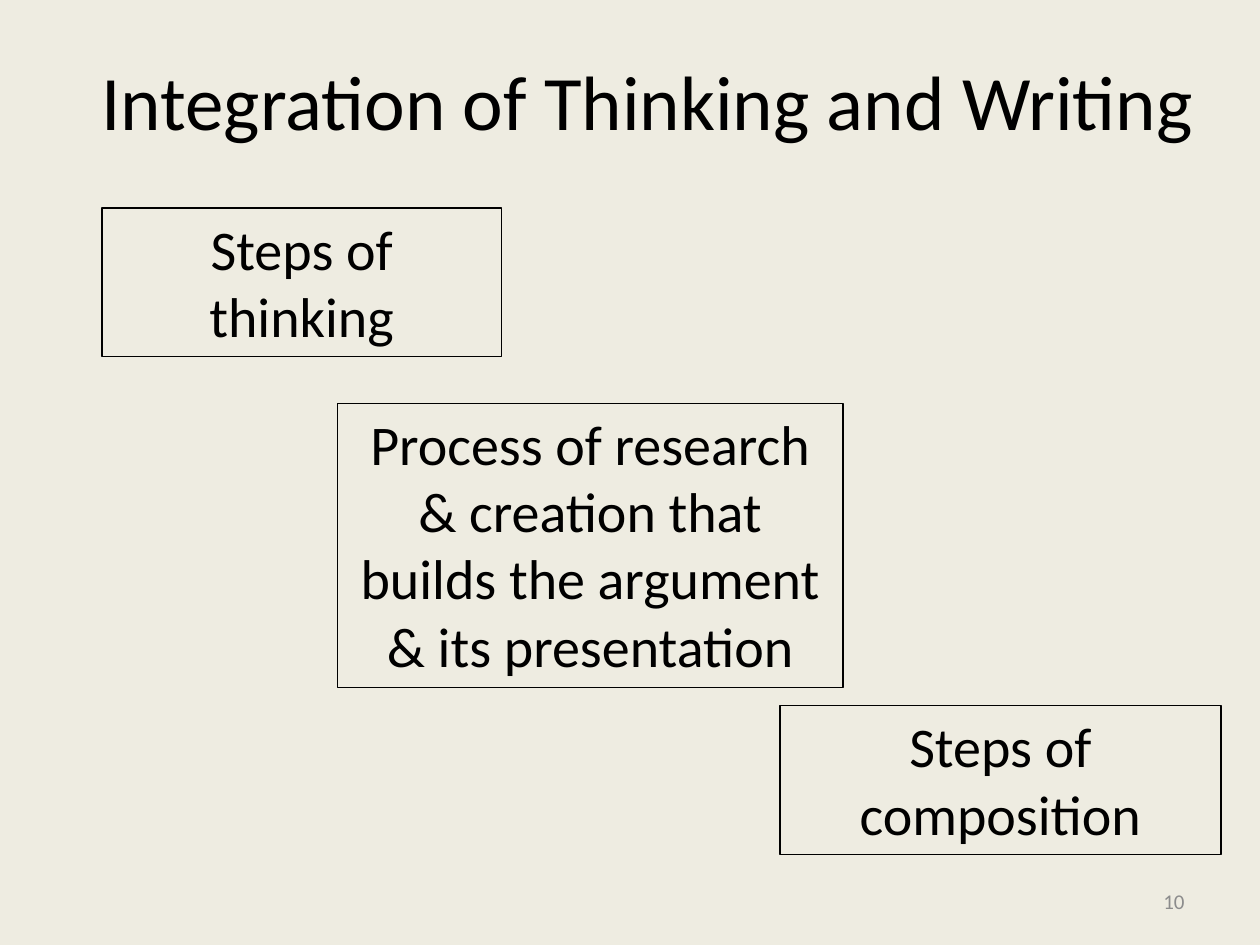
from pptx import Presentation
from pptx.dml.color import RGBColor
from pptx.enum import shapes, text
from pptx.util import Inches, Pt

COLORS = {"background": "EEECE1", "ink": "000000", "number": "8C8C8C"}
FONT = "Calibri"


def rgb(name):
    return RGBColor.from_string(COLORS[name])


def set_text(shape, content, size, color, align, anchor):
    tf = shape.text_frame
    tf.word_wrap = True
    tf.vertical_anchor = anchor
    tf.text = content
    p = tf.paragraphs[0]
    p.alignment = align
    font = p.runs[0].font
    font.name, font.size = FONT, Pt(size)
    font.color.rgb = rgb(color)


def place_title(s, box, content):
    title = s.shapes.title
    title.left, title.top, title.width, title.height = map(Inches, box)
    set_text(title, content, 44, "ink", text.PP_ALIGN.CENTER, text.MSO_ANCHOR.MIDDLE)


def add_stage(s, box, content):
    sp = s.shapes.add_shape(shapes.MSO_SHAPE.RECTANGLE, *map(Inches, box))
    sp.shadow.inherit = False
    sp.fill.background()
    sp.line.color.rgb = rgb("ink")
    sp.line.width = Pt(0.75)
    set_text(sp, content, 32, "ink", text.PP_ALIGN.CENTER, text.MSO_ANCHOR.TOP)
    sp.text_frame.auto_size = text.MSO_AUTO_SIZE.SHAPE_TO_FIT_TEXT


def add_page_number(s, box, number):
    sp = s.shapes.add_textbox(*map(Inches, box))
    set_text(sp, number, 12, "number", text.PP_ALIGN.RIGHT, text.MSO_ANCHOR.MIDDLE)


def main():
    prs = Presentation()
    prs.slide_width, prs.slide_height = Inches(10), Inches(7.5)
    s = prs.slides.add_slide(prs.slide_layouts[5])
    s.background.fill.solid()
    s.background.fill.fore_color.rgb = rgb("background")

    # Title
    place_title(s, (0.5, 0.3, 9.42, 0.98), "Integration of Thinking and Writing ")

    # Stages stepping down from thinking to composition
    stages = [
        ((0.81, 1.65, 3.17, 1.18), "Steps of thinking"),
        ((2.68, 3.2, 4.01, 2.26),
         "Process of research & creation that builds the argument & its presentation"),
        ((6.19, 5.6, 3.5, 1.18), "Steps of composition"),
    ]
    for box, content in stages:
        add_stage(s, box, content)

    # Page number
    add_page_number(s, (7.17, 6.95, 2.33, 0.4), "10")

    prs.save("out.pptx")


if __name__ == "__main__":
    main()
